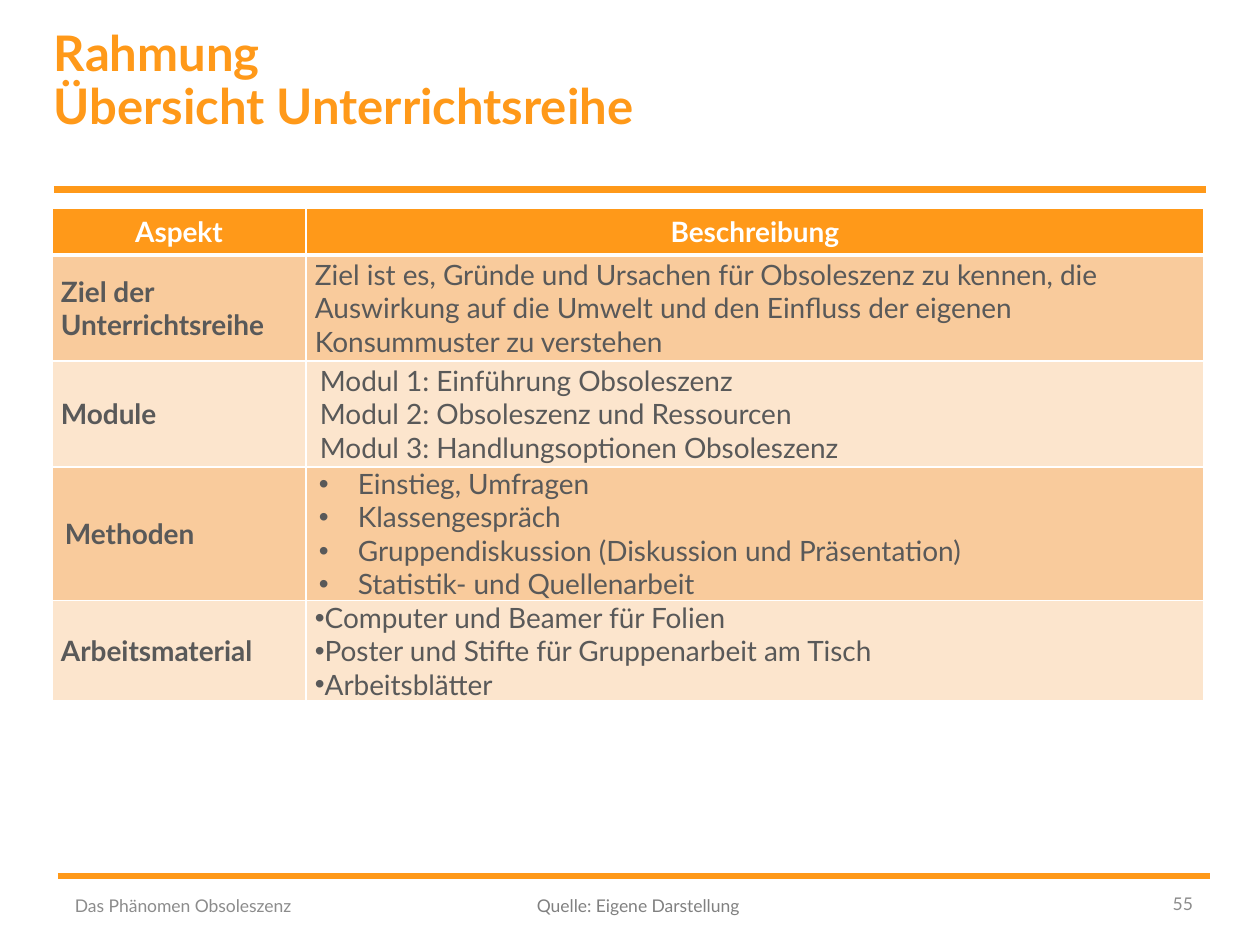
from lxml.etree import SubElement
from pptx import Presentation
from pptx.dml.color import RGBColor
from pptx.enum.shapes import MSO_CONNECTOR
from pptx.enum.text import MSO_ANCHOR, PP_ALIGN
from pptx.oxml.ns import qn
from pptx.util import Pt

PX = 914400 / 126
ORANGE = RGBColor(0xFF, 0x99, 0x19)
PEACH = RGBColor(0xF9, 0xCB, 0x9C)
CREAM = RGBColor(0xFC, 0xE5, 0xCD)
WHITE = RGBColor(0xFF, 0xFF, 0xFF)
DARK = RGBColor(0x59, 0x59, 0x59)
GRAY = RGBColor(0x80, 0x80, 0x80)
LIGHT_GRAY = RGBColor(0x8C, 0x8C, 0x8C)


def px(*lengths):
    return [round(length * PX) for length in lengths]


def write(paragraph, text, size, color, bold=False, align=PP_ALIGN.LEFT):
    paragraph.text = text
    paragraph.alignment = align
    for run in paragraph.runs:
        for key, value in {"name": "Lato", "size": Pt(size), "bold": bold}.items():
            setattr(run.font, key, value)
        run.font.color.rgb = color


prs = Presentation()
prs.slide_width, prs.slide_height = px(1260, 945)
slide = prs.slides.add_slide(prs.slide_layouts[6])

# Rules above and below the content
for left, y in [(54, 190), (58, 876)]:
    rule = slide.shapes.add_connector(MSO_CONNECTOR.STRAIGHT, *px(left, y, left + 1152, y))
    rule.line.color.rgb = ORANGE
    rule.line.width = Pt(4)
    SubElement(rule._element.spPr, qn("a:effectLst"))

# Overview table: label, label indent, description lines, left margin, hanging indent
aspects = [
    ("Ziel der Unterrichtsreihe", 0,
     ["Ziel ist es, Gründe und Ursachen für Obsoleszenz zu kennen, die Auswirkung "
      "auf die Umwelt und den Einfluss der eigenen Konsummuster zu verstehen"], 0, 0),
    ("Module", 0,
     ["Modul 1: Einführung Obsoleszenz",
      "Modul 2: Obsoleszenz und Ressourcen",
      "Modul 3: Handlungsoptionen Obsoleszenz"], 5, 0),
    ("Methoden", 4,
     ["Einstieg, Umfragen", "Klassengespräch",
      "Gruppendiskussion (Diskussion und Präsentation)",
      "Statistik- und Quellenarbeit"], 43, -39),
    ("Arbeitsmaterial", 0,
     ["Computer und Beamer für Folien",
      "Poster und Stifte für Gruppenarbeit am Tisch",
      "Arbeitsblätter"], 0, -39),
]
rows = [("Aspekt", 0, ["Beschreibung"], 0, 0)] + aspects
row_heights = [47, 106, 106, 133, 100]
table = slide.shapes.add_table(len(rows), 2, *px(52, 208, 1152, sum(row_heights))).table
for column, width in zip(table.columns, px(254, 898)):
    column.width = width

for r, (label, label_indent, lines, margin, hanging) in enumerate(rows):
    table.rows[r].height = px(row_heights[r])[0]
    is_header = r == 0
    columns = [([label], label_indent, 0), (lines, margin, hanging)]
    for c, (texts, left, indent) in enumerate(columns):
        cell = table.cell(r, c)
        side = px(9)[0]
        for key, value in {"margin_left": side, "margin_right": side, "margin_top": 0,
                           "margin_bottom": 0, "vertical_anchor": MSO_ANCHOR.MIDDLE}.items():
            setattr(cell, key, value)
        heavy_edge = {0: "lnB", 1: "lnT"}.get(r)
        for edge in ("lnL", "lnR", "lnT", "lnB"):
            width = Pt(3 if edge == heavy_edge else 1)
            border = SubElement(cell._tc.get_or_add_tcPr(), qn(f"a:{edge}"), w=str(width))
            SubElement(SubElement(border, qn("a:solidFill")), qn("a:srgbClr"), val=str(WHITE))
        cell.fill.solid()
        cell.fill.fore_color.rgb = ORANGE if is_header else (PEACH if r % 2 else CREAM)

        for i, text in enumerate(texts):
            frame = cell.text_frame
            paragraph = frame.add_paragraph() if i else frame.paragraphs[0]
            props = paragraph._p.get_or_add_pPr()
            props.set("marL", str(px(left)[0]))
            props.set("indent", str(px(indent)[0]))
            if indent:
                SubElement(props, qn("a:buFont"), typeface="Arial")
                SubElement(props, qn("a:buChar"), char="•")
            write(paragraph, text, 16, WHITE if is_header else DARK, is_header or c == 0,
                  PP_ALIGN.CENTER if is_header else PP_ALIGN.LEFT)

# Title and footer: text, box, inset, anchor, line spacing, text format
MIDDLE = MSO_ANCHOR.MIDDLE
texts = [
    ("Rahmung\vÜbersicht Unterrichtsreihe", (54, 29, 843, 147), (0, 0),
     MSO_ANCHOR.TOP, 0.9, (28, ORANGE, True)),
    ("Quelle: Eigene Darstellung", (537, 881, 490, 50), (0, 0), MIDDLE, 1, (10, GRAY)),
    ("Das Phänomen Obsoleszenz", (62, 881, 426, 50), (13, 6), MIDDLE, 1, (10, LIGHT_GRAY)),
    ("55", (1130, 879, 76, 50), (13, 6), MIDDLE, 1, (10, LIGHT_GRAY, False, PP_ALIGN.RIGHT)),
]
for text, box, inset, anchor, spacing, text_format in texts:
    frame = slide.shapes.add_textbox(*px(*box)).text_frame
    across, down = px(*inset)
    for key, value in {"word_wrap": True, "vertical_anchor": anchor,
                       "margin_left": across, "margin_right": across,
                       "margin_top": down, "margin_bottom": down}.items():
        setattr(frame, key, value)
    frame.paragraphs[0].line_spacing = spacing
    write(frame.paragraphs[0], text, *text_format)

prs.save("out.pptx")
